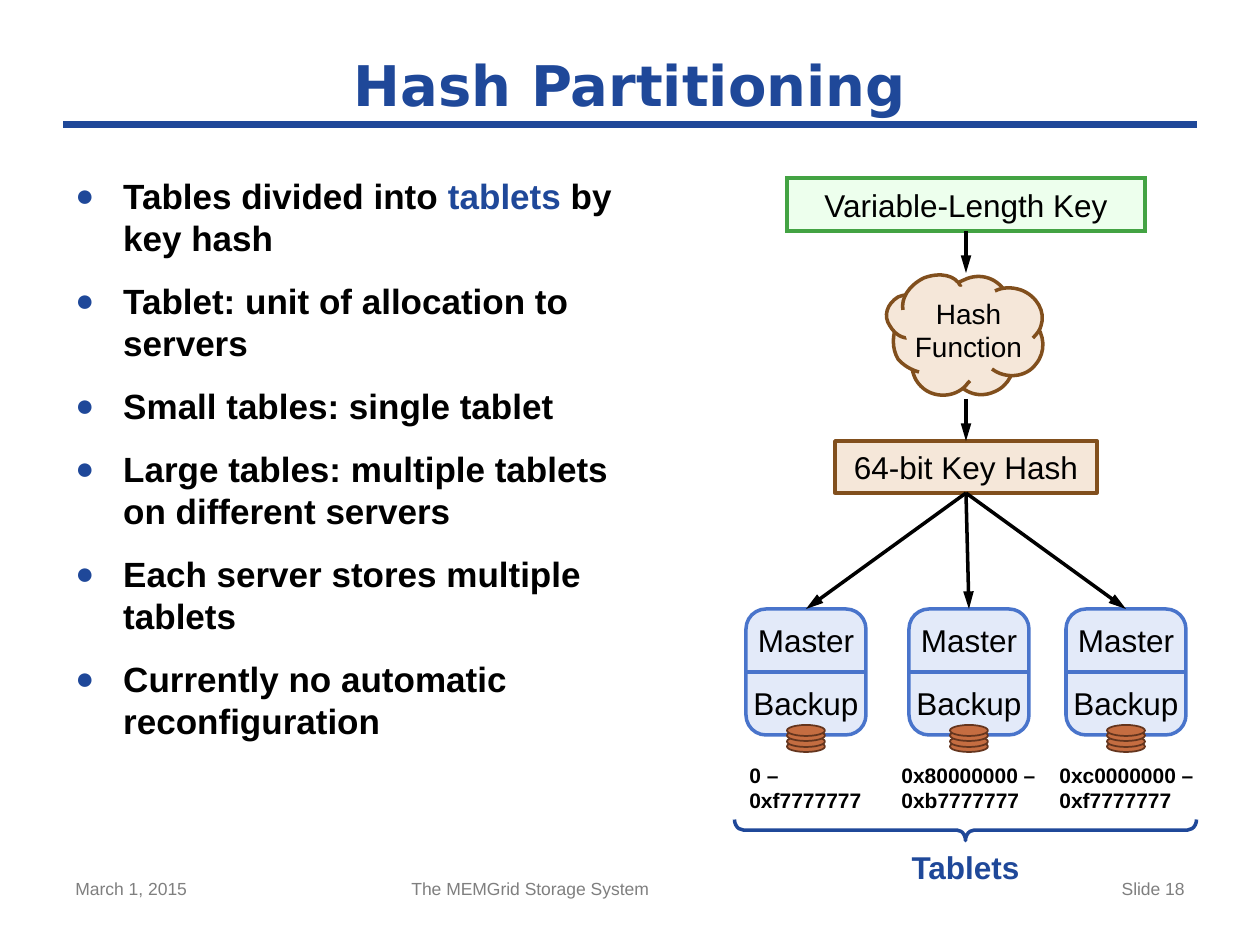
from copy import deepcopy

from lxml import etree
from pptx import Presentation
from pptx import util as u
from pptx.dml.color import RGBColor
from pptx.enum import shapes, text
from pptx.oxml import ns

SCALE = 914400 / 126
COLORS = {
    "blue": "1F4899", "black": "000000", "gray": "7F7F7F",
    "server": "E3EAF9", "server_line": "4974CB",
    "disk": "C56D41", "disk_line": "64351E",
    "key": "EDFFED", "key_line": "43A343",
    "hash": "F5E7D9", "hash_line": "814F1D",
}
BULLETS = [
    ["Tables divided into ", "tablets", " by key hash"],
    ["Tablet: unit of allocation to servers"],
    ["Small tables: single tablet"],
    ["Large tables: multiple tablets on different servers"],
    ["Each server stores multiple tablets"],
    ["Currently no automatic reconfiguration"],
]
SERVER_LEFTS = [746, 909, 1066]
RANGES = [
    (737, 137, "0 –\n0xf7777777"),
    (889, 160, "0x80000000 –\n0xb7777777"),
    (1047, 160, "0xc0000000 –\n0xf7777777"),
]
CLOUD_LOBES = [
    ((982, 363), [(953, 375), (960, 392), (978, 399), (994, 392),
                  (1009, 386), (1017, 370), (1012, 355)]),
    ((1012, 344), [(992, 369), (1005, 379), (1026, 378), (1036, 364),
                   (1046, 352), (1045, 334), (1034, 323)]),
    ((944, 364), [(912, 360), (911, 372), (915, 382), (924, 389),
                  (937, 399), (958, 397), (968, 383),
                  (969, 383), (969, 382), (970, 381)]),
    ((925, 341), [(897, 325), (892, 335), (892, 349), (898, 359),
                  (903, 365), (911, 370), (919, 372)]),
    ((908, 316), [(907, 295), (903, 295), (901, 296), (898, 297),
                  (887, 304), (883, 316), (890, 326),
                  (895, 334), (902, 339), (911, 338)]),
    ((978, 307), [(1007, 295), (999, 278), (980, 272), (964, 280),
                  (961, 281), (959, 282), (956, 285)]),
    ((1012, 316), [(1033, 338), (1037, 334), (1040, 330), (1041, 326),
                   (1046, 312), (1037, 296), (1021, 290),
                   (1012, 287), (1003, 287), (995, 291)]),
    ((932, 300), [(961, 287), (956, 275), (940, 272), (924, 278),
                  (908, 286), (901, 299), (903, 310)]),
]
CLOUD_CORE = [(914, 364), (916, 365), (956, 379), (1021, 350), (1033, 319),
              (997, 294), (946, 284), (907, 302), (903, 326)]


def px(*values):
    return [u.Emu(round(value * SCALE)) for value in values]


def rgb(name):
    return RGBColor.from_string(COLORS[name])


def paint(shape, fill=None, line=None, width=2):
    shape.shadow.inherit = False
    if fill:
        shape.fill.solid()
        shape.fill.fore_color.rgb = rgb(fill)
    else:
        shape.fill.background()
    if line:
        shape.line.color.rgb = rgb(line)
        shape.line.width = u.Pt(width)
    else:
        shape.line.fill.background()


def style_text(box, size, color="black", bold=False, align="LEFT", font="Arial"):
    for para in box.text_frame.paragraphs:
        para.alignment = getattr(text.PP_ALIGN, align)
        for span in para.runs:
            span.font.name = font
            span.font.size = u.Pt(size)
            span.font.bold = bold
            span.font.color.rgb = rgb(color)


def add_text(parent, place, words, size, wrap=True, inset=True, **style):
    box = parent.shapes.add_textbox(*px(*place))
    frame = box.text_frame
    frame.word_wrap = wrap
    if not inset:
        frame.margin_left = frame.margin_right = 0
        frame.margin_top = frame.margin_bottom = 0
    frame.text = words
    style_text(box, size, **style)
    return box


def add_box(parent, kind, place, fill, line, width=2):
    box = parent.shapes.add_shape(kind, *px(*place))
    paint(box, fill, line, width)
    return box


def add_label_box(page, place, words, fill, line):
    box = add_box(page, shapes.MSO_SHAPE.RECTANGLE, place, fill, line)
    box.text_frame.text = words
    box.text_frame.word_wrap = False
    box.text_frame.vertical_anchor = text.MSO_ANCHOR.MIDDLE
    style_text(box, 18, align="CENTER")
    return box


def add_line(parent, ends, color, width=2, arrow=False):
    line = parent.shapes.add_connector(shapes.MSO_CONNECTOR.STRAIGHT, *px(*ends))
    line.line.color.rgb = rgb(color)
    line.line.width = u.Pt(width)
    if arrow:
        etree.SubElement(line.line._get_or_add_ln(), ns.qn("a:tailEnd"),
                         type="triangle", w="med", len="lg")
    etree.SubElement(line._element.spPr, ns.qn("a:effectLst"))
    return line


def add_outline(parent, points, fill, line=None):
    start, *rest = [px(*point) for point in points]
    builder = parent.shapes.build_freeform(*start)
    builder.add_line_segments(rest, close=True)
    outline = builder.convert_to_shape()
    paint(outline, fill, line)
    return outline


def add_lobe(parent, inner, nodes):
    lobe = add_outline(parent, nodes + [inner], "hash", "hash_line")
    area = next(lobe._element.iter(ns.qn("a:path")))
    segments = area.findall(ns.qn("a:lnTo"))[:len(nodes) - 1]
    for first in range(0, len(segments), 3):
        curve = etree.Element(ns.qn("a:cubicBezTo"))
        segments[first].addprevious(curve)
        for segment in segments[first:first + 3]:
            curve.append(segment[0])
            area.remove(segment)
    edge = deepcopy(area)
    for name in ("a:lnTo", "a:close"):
        for part in edge.findall(ns.qn(name)):
            edge.remove(part)
    area.set("stroke", "0")
    edge.set("fill", "none")
    area.addnext(edge)


def add_cloud(page):
    cloud = page.shapes.add_group_shape()
    for inner, nodes in CLOUD_LOBES:
        add_lobe(cloud, inner, nodes)
    add_outline(cloud, CLOUD_CORE, "hash")
    add_text(cloud, (902, 290, 133, 80), "Hash\vFunction", 16, wrap=False, align="CENTER")


def add_server(page, left):
    server = page.shapes.add_group_shape()
    body = add_box(server, shapes.MSO_SHAPE.ROUNDED_RECTANGLE,
                   (left, 609, 120, 126), "server", "server_line")
    for top, role in ((621, "Master"), (684, "Backup")):
        add_text(server, (left, top, 120, 38), role, 18, inset=False, align="CENTER")
    add_line(server, (left, 672, left + 120, 672), "server_line")
    for top in (741, 736, 730, 725):
        add_box(server, shapes.MSO_SHAPE.OVAL, (left + 41, top, 38, 11),
                "disk", "disk_line", 1)
    return body


def add_title(page, words):
    title = page.shapes.title
    title.left, title.top, title.width, title.height = px(63, 42, 1134, 84)
    title.text_frame.text = words
    title.text_frame.auto_size = text.MSO_AUTO_SIZE.NONE
    title.text_frame.vertical_anchor = text.MSO_ANCHOR.MIDDLE
    style_text(title, 32, "blue", True, "CENTER", "DejaVu Sans")


def add_bullets(page):
    box = add_text(page, (63, 168, 567, 677), "", 20)
    frame = box.text_frame
    for index, parts in enumerate(BULLETS):
        para = frame.add_paragraph() if index else frame.paragraphs[0]
        for part in parts:
            para.add_run().text = part
        para.space_before = u.Pt(12)
        props = para._p.get_or_add_pPr()
        props.set("marL", str(u.Inches(0.38)))
        props.set("indent", str(-u.Inches(0.38)))
        color = etree.SubElement(props, ns.qn("a:buClr"))
        etree.SubElement(color, ns.qn("a:srgbClr"), val=COLORS["blue"])
        etree.SubElement(props, ns.qn("a:buSzPct"), val="90000")
        etree.SubElement(props, ns.qn("a:buFont"), typeface="Arial")
        etree.SubElement(props, ns.qn("a:buChar"), char="●")
    style_text(box, 20, bold=True)
    frame.paragraphs[0].runs[1].font.color.rgb = rgb("blue")


def main():
    deck = Presentation()
    deck.slide_width, deck.slide_height = u.Inches(10), u.Inches(7.5)
    page = deck.slides.add_slide(deck.slide_layouts[5])
    add_line(page, (63, 125, 1197, 125), "blue", 4)
    add_title(page, "Hash Partitioning")
    add_bullets(page)
    add_text(page, (63, 872, 294, 54), "March 1, 2015", 10, color="gray")
    add_text(page, (399, 872, 473, 54), "The MEMGrid Storage System", 10, color="gray")
    add_text(page, (903, 872, 294, 54), "Slide 18", 10, color="gray", align="RIGHT")

    servers = [add_server(page, left) for left in SERVER_LEFTS]
    key = add_label_box(page, (787, 178, 358, 53), "Variable-Length Key", "key", "key_line")
    etree.SubElement(key.line._get_or_add_ln(), ns.qn("a:miter"), lim="800000")
    add_cloud(page)
    key_hash = add_label_box(page, (835, 441, 262, 52), "64-bit Key Hash", "hash", "hash_line")
    add_line(page, (966, 231, 966, 273), "black", arrow=True).begin_connect(key, 2)
    add_line(page, (966, 399, 966, 441), "black", arrow=True).end_connect(key_hash, 0)
    for left, server in zip(SERVER_LEFTS, servers):
        arrow = add_line(page, (966, 493, left + 60, 609), "black", arrow=True)
        arrow.begin_connect(key_hash, 2)
        arrow.end_connect(server, 0)

    for left, width, words in RANGES:
        add_text(page, (left, 756, width, 63), words, 12, wrap=False, bold=True)
    add_text(page, (898, 842, 135, 50), "Tablets", 18, wrap=False,
             color="blue", bold=True, align="CENTER")
    brace = add_box(page, shapes.MSO_SHAPE.LEFT_BRACE, (955, 599, 21, 462), None, "blue")
    brace.rotation = 270
    brace.adjustments[0] = 0.42
    deck.save("out.pptx")


if __name__ == "__main__":
    main()
